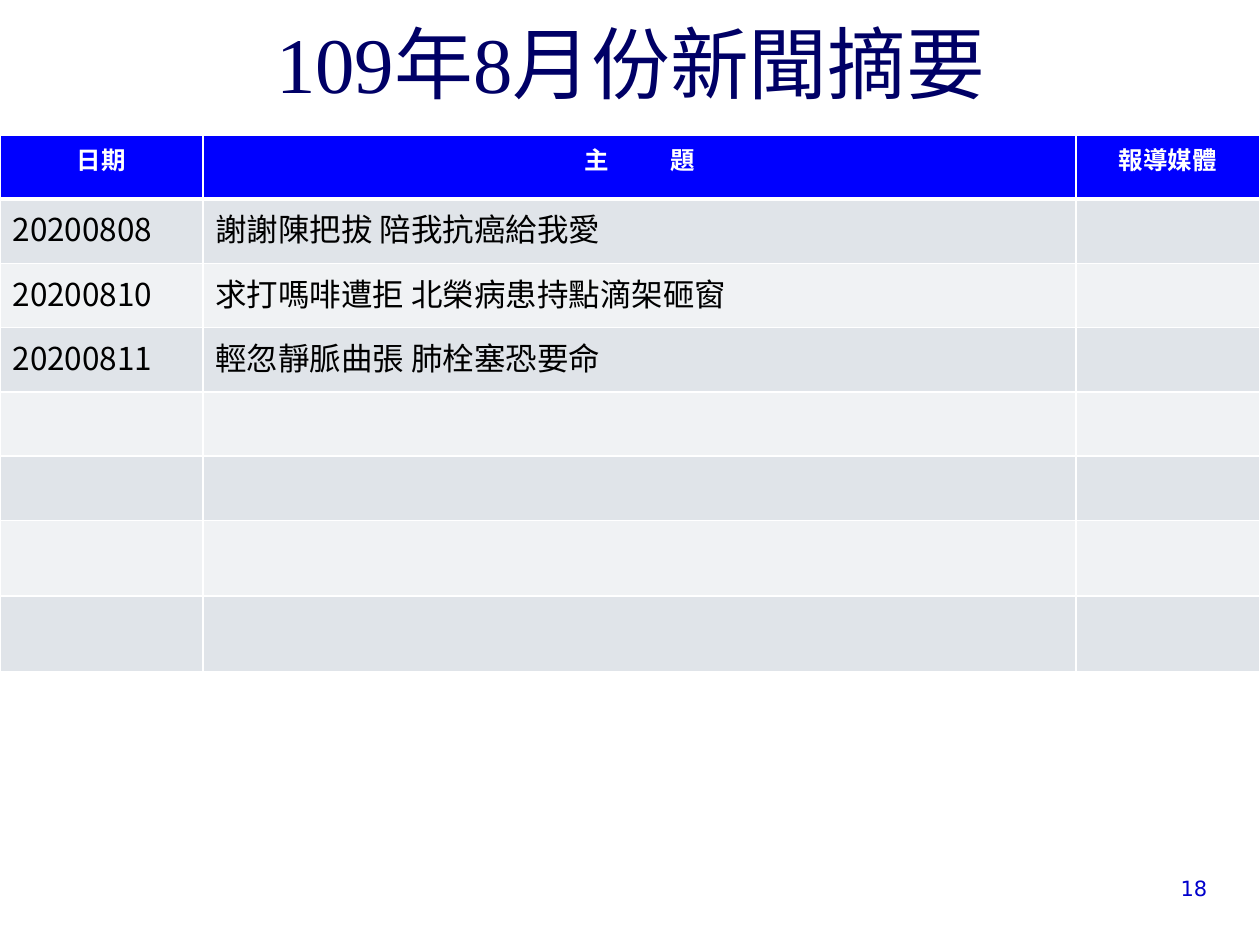
"""Build the monthly news summary slide with its table of headlines."""
from dataclasses import dataclass

from lxml import etree
from pptx import Presentation
from pptx.dml.color import RGBColor
from pptx.enum.text import MSO_ANCHOR, PP_ALIGN
from pptx.oxml.ns import qn
from pptx.util import Inches, Pt

CENTER, LEFT, RIGHT = PP_ALIGN.CENTER, PP_ALIGN.LEFT, PP_ALIGN.RIGHT
BOTTOM = MSO_ANCHOR.BOTTOM
TITLE_ONLY = 5
CJK_FONT = "Noto Sans CJK SC"
COLUMN_WIDTHS = (1.61, 6.93, 1.46)
ROW_HEIGHTS = (0.51,) * 6 + (0.6,) * 2
BAND_FILLS = ("E0E4E9", "F0F2F4")
HEADER_FILL = "0000FF"
RULE_COLOR = "FFFFFF"
THIN, THICK = 1, 3


@dataclass(frozen=True)
class TextStyle:
    size: float
    font: str
    color: str
    bold: bool = False


@dataclass(frozen=True)
class News:
    date: str
    subject: str


TITLE_STYLE = TextStyle(45, "Times New Roman", "000066")
HEADER_STYLE = TextStyle(14, CJK_FONT, "FFFFFF", True)
BODY_STYLE = TextStyle(18, CJK_FONT, "000000")
NUMBER_STYLE = TextStyle(12, "DejaVu Sans", "0000CC")

HEADERS = (("日期",), ("主", " ", "題"), ("報導媒體",))
HEADER_GAP = 32
NEWS = (
    News("20200808", "謝謝陳把拔 陪我抗癌給我愛"),
    News("20200810", "求打嗎啡遭拒 北榮病患持點滴架砸窗"),
    News("20200811", "輕忽靜脈曲張 肺栓塞恐要命"),
)


def rgb(color: str) -> RGBColor:
    return RGBColor.from_string(color)


def add_run(paragraph, text: str, style: TextStyle) -> None:
    run = paragraph.add_run()
    run.text = text
    run.font.size = Pt(style.size)
    run.font.name = style.font
    run.font.bold = style.bold
    run.font.color.rgb = rgb(style.color)
    properties = run.font._element
    if style.font == CJK_FONT:
        etree.SubElement(properties, qn("a:ea"), typeface=CJK_FONT)
    if text == " ":
        properties.set("spc", str(HEADER_GAP * 100))


def write(frame, parts: tuple[str, ...], style: TextStyle, align) -> None:
    paragraph = frame.paragraphs[0]
    paragraph.alignment = align
    for part in parts:
        add_run(paragraph, part, style)


def format_cell(cell, fill: str, top: float, bottom: float) -> None:
    cell.fill.solid()
    cell.fill.fore_color.rgb = rgb(fill)
    properties = cell._tc.get_or_add_tcPr()
    borders = (("lnL", THIN), ("lnR", THIN), ("lnT", top), ("lnB", bottom))
    for index, (side, width) in enumerate(borders):
        line = etree.Element(qn(f"a:{side}"), w=str(Pt(width)))
        solid = etree.SubElement(line, qn("a:solidFill"))
        etree.SubElement(solid, qn("a:srgbClr"), val=RULE_COLOR)
        properties.insert(index, line)


def add_title(slide) -> None:
    title = slide.shapes.title
    title.left, title.top = Inches(0.63), Inches(0.34)
    title.width, title.height = Inches(8.75), Inches(0.58)
    title.text_frame.vertical_anchor = BOTTOM
    write(title.text_frame, ("109年8月份新聞摘要",), TITLE_STYLE, CENTER)


def add_news_table(slide) -> None:
    table = slide.shapes.add_table(
        len(ROW_HEIGHTS), len(COLUMN_WIDTHS), Inches(0), Inches(1.07),
        Inches(sum(COLUMN_WIDTHS)), Inches(sum(ROW_HEIGHTS)),
    ).table
    for column, width in zip(table.columns, COLUMN_WIDTHS):
        column.width = Inches(width)
    for index, (row, height) in enumerate(zip(table.rows, ROW_HEIGHTS)):
        row.height = Inches(height)
        fill = BAND_FILLS[(index - 1) % 2] if index else HEADER_FILL
        top = THICK if index == 1 else THIN
        bottom = THIN if index else THICK
        for cell in row.cells:
            format_cell(cell, fill, top, bottom)
    for column, header in enumerate(HEADERS):
        write(table.cell(0, column).text_frame, header, HEADER_STYLE, CENTER)
    for row, news in enumerate(NEWS, start=1):
        for column, text in enumerate((news.date, news.subject)):
            write(table.cell(row, column).text_frame, (text,), BODY_STYLE, LEFT)


def add_page_number(slide) -> None:
    page_number = slide.shapes.add_textbox(
        Inches(8.94), Inches(6.9), Inches(0.74), Inches(0.3)
    )
    page_number.text_frame.word_wrap = True
    write(page_number.text_frame, ("18",), NUMBER_STYLE, RIGHT)


def main() -> None:
    presentation = Presentation()
    presentation.slide_width = Inches(10)
    presentation.slide_height = Inches(7.5)
    slide = presentation.slides.add_slide(presentation.slide_layouts[TITLE_ONLY])
    add_title(slide)
    add_news_table(slide)
    add_page_number(slide)
    presentation.save("out.pptx")


if __name__ == "__main__":
    main()
